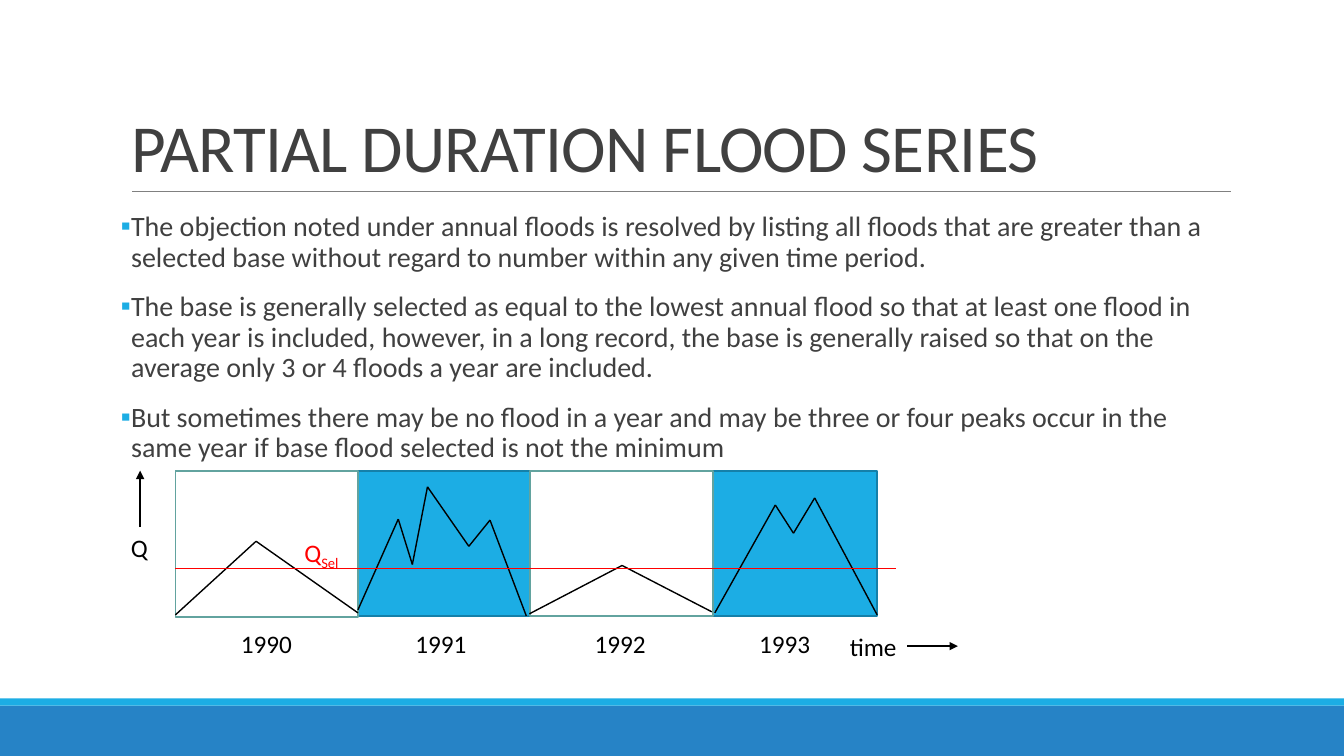
from itertools import pairwise

from lxml import etree
from pptx import Presentation
from pptx.dml.color import RGBColor
from pptx.enum import shapes, text
from pptx.oxml import ns
from pptx.util import Inches, Pt

THEME = {
    "font": "Calibri",
    "title": 48, "body": 20, "label": 18,
    "ink": "404040", "black": "000000", "white": "FFFFFF", "red": "FF0000",
    "rule": "808080", "cyan": "1CADE4", "blue": "2683C6",
    "cyan_edge": "1580A9", "white_edge": "62A39F",
}


def add_span(para, words, size, color):
    span = para.add_run()
    span.text = words
    span.font.name = THEME["font"]
    span.font.size = Pt(THEME[size])
    span.font.color.rgb = RGBColor.from_string(THEME[color])
    return span


def add_line(start, end, color="black", width=1, arrow=False):
    line = page.shapes.add_connector(
        shapes.MSO_CONNECTOR.STRAIGHT, *map(Inches, (*start, *end)))
    line.line.color.rgb = RGBColor.from_string(THEME[color])
    line.line.width = Pt(width)
    if arrow:
        etree.SubElement(line.line._get_or_add_ln(), ns.qn("a:tailEnd"), type="triangle")
    etree.SubElement(line._element.spPr, ns.qn("a:effectLst"))


deck = Presentation()
deck.slide_width, deck.slide_height = Inches(13.33), Inches(7.5)
page = deck.slides.add_slide(deck.slide_layouts[1])

# Title and body text
title, body = page.shapes.title, page.placeholders[1]
for box, top, height in ((title, 0.31, 1.59), (body, 2.06, 4.4)):
    box.left, box.top = Inches(1.2), Inches(top)
    box.width, box.height = Inches(11), Inches(height)
    box.text_frame.auto_size = text.MSO_AUTO_SIZE.NONE

title.text_frame.vertical_anchor = text.MSO_ANCHOR.BOTTOM
para = title.text_frame.paragraphs[0]
para.alignment = text.PP_ALIGN.LEFT
para.line_spacing = 0.85
span = add_span(para, "PARTIAL DURATION FLOOD SERIES", "title", "ink")
span.font._element.set("spc", "-50")

points = [
    "The objection noted under annual floods is resolved by listing all floods that are "
    "greater than a selected base without regard to number within any given time period.",
    "The base is generally selected as equal to the lowest annual flood so that at least "
    "one flood in each year is included, however, in a long record, the base is generally "
    "raised so that on the average only 3 or 4 floods a year are included.",
    "But sometimes there may be no flood in a year and may be three or four peaks occur "
    "in the same year if base flood selected is not the minimum",
]
frame = body.text_frame
frame.margin_left = frame.margin_right = 0
for number, words in enumerate(points):
    para = frame.add_paragraph() if number else frame.paragraphs[0]
    para.line_spacing = 0.9
    para.space_before, para.space_after = Pt(12), Pt(2)
    add_span(para, words, "body", "ink")
    props = para._p.get_or_add_pPr()
    props.set("marL", str(Inches(0.1)))
    props.set("indent", str(-Inches(0.1)))
    bullet_color = etree.SubElement(props, ns.qn("a:buClr"))
    etree.SubElement(bullet_color, ns.qn("a:srgbClr"), val=THEME["cyan"])
    etree.SubElement(props, ns.qn("a:buFont"), typeface=THEME["font"])
    etree.SubElement(props, ns.qn("a:buChar"), char="▪")

# Footer bands, then the chart's blue band with white panels for 1990 and 1992
for left, top, width, height, fill, edge in (
    (0, 7, 13.33, 0.5, "blue", None),
    (0, 6.93, 13.33, 0.07, "cyan", None),
    (1.74, 4.67, 6.96, 1.44, "cyan", "cyan_edge"),
    (1.74, 4.67, 1.81, 1.45, "white", "white_edge"),
    (5.26, 4.67, 1.81, 1.44, "white", "white_edge"),
):
    panel = page.shapes.add_shape(
        shapes.MSO_SHAPE.RECTANGLE, *map(Inches, (left, top, width, height)))
    panel.shadow.inherit = False
    panel.fill.solid()
    panel.fill.fore_color.rgb = RGBColor.from_string(THEME[fill])
    if edge:
        panel.line.color.rgb = RGBColor.from_string(THEME[edge])
        panel.line.width = Pt(1.25)
    else:
        panel.line.fill.background()

add_line((1.31, 1.9), (12.21, 1.9), "rule", 0.5)

# Flood hydrograph of each year
hydrographs = {
    "1990": [(1.74, 6.1), (2.54, 5.37), (3.55, 6.08)],
    "1991": [(3.55, 6.05), (3.95, 5.15), (4.09, 5.6), (4.24, 4.83),
             (4.65, 5.42), (4.86, 5.16), (5.22, 6.11)],
    "1992": [(5.25, 6.09), (6.17, 5.61), (7.06, 6.07)],
    "1993": [(7.09, 6.08), (7.69, 5.01), (7.87, 5.29), (8.08, 4.94), (8.7, 6.1)],
}
for vertices in hydrographs.values():
    for start, end in pairwise(vertices):
        add_line(start, end)

# Axis arrows and the selected base flow
add_line((1.39, 5.23), (1.39, 4.67), arrow=True)
add_line((9, 6.41), (9.5, 6.41), arrow=True)
add_line((1.74, 5.64), (8.89, 5.64), "red")

# Labels
year_lefts = (2.29, 4.02, 5.8, 7.43)
labels = [(year, left, 6.18, 0.71, "black") for year, left in zip(hydrographs, year_lefts)]
labels += [("Q", 1.2, 5.23, 0.37, "black"), ("time", 8.33, 6.21, 0.67, "black"),
           ("Q", 2.92, 5.28, 0.57, "red")]
for words, left, top, width, color in labels:
    box = page.shapes.add_textbox(*map(Inches, (left, top, width, 0.4)))
    box.text_frame.word_wrap = False
    box.text_frame.auto_size = text.MSO_AUTO_SIZE.SHAPE_TO_FIT_TEXT
    para = box.text_frame.paragraphs[0]
    add_span(para, words, "label", color)
    if color == "red":
        subscript = add_span(para, "Sel", "label", color)
        subscript.font._element.set("baseline", "-25000")

deck.save("out.pptx")
